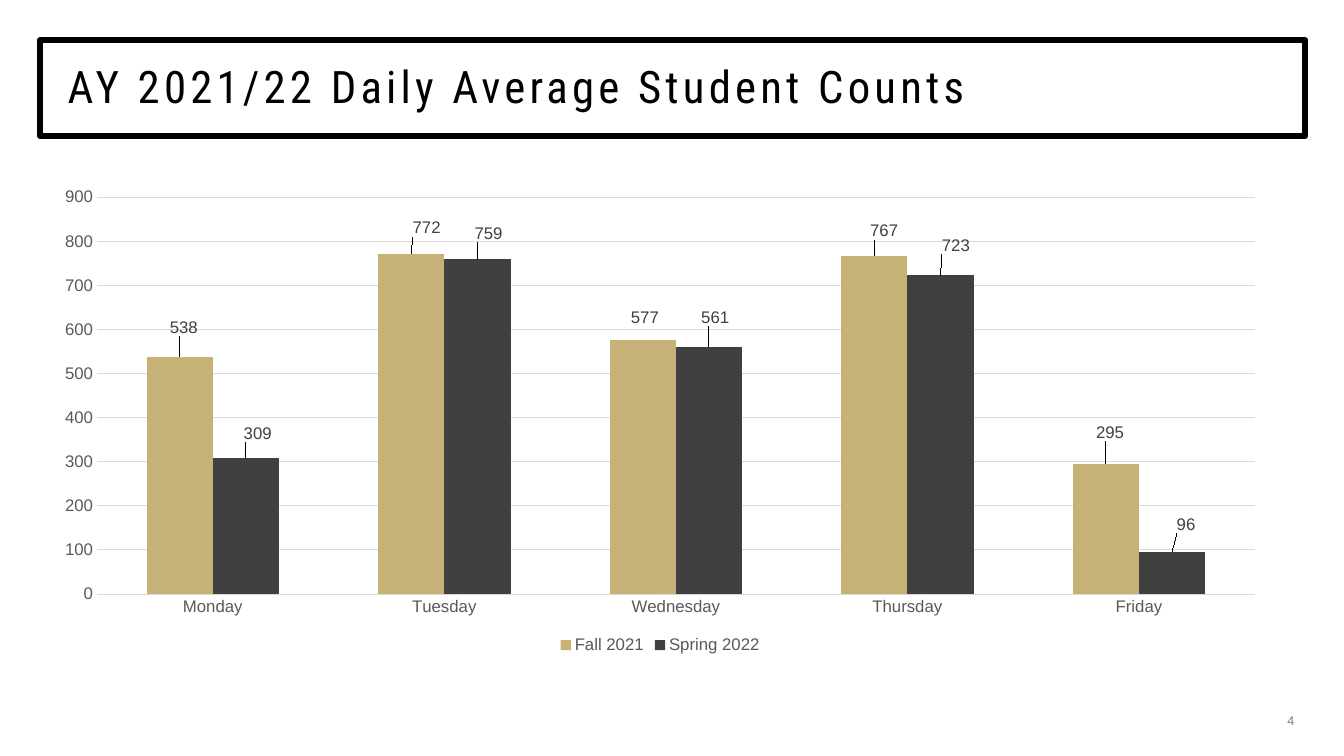
from dataclasses import dataclass

from lxml import etree
from pptx import Presentation
from pptx.chart.data import CategoryChartData
from pptx.dml.color import RGBColor
from pptx.enum.chart import XL_CHART_TYPE, XL_LABEL_POSITION, XL_LEGEND_POSITION, XL_TICK_MARK
from pptx.enum.shapes import MSO_SHAPE
from pptx.enum.text import MSO_ANCHOR, PP_ALIGN
from pptx.oxml.ns import qn
from pptx.util import Pt

COLUMN = XL_CHART_TYPE.COLUMN_CLUSTERED
OUTSIDE = XL_LABEL_POSITION.OUTSIDE_END
BOTTOM = XL_LEGEND_POSITION.BOTTOM
NO_TICK = XL_TICK_MARK.NONE
RECT = MSO_SHAPE.RECTANGLE
MIDDLE = MSO_ANCHOR.MIDDLE
RIGHT = PP_ALIGN.RIGHT


@dataclass(frozen=True)
class Theme:
    head: str = "Roboto Condensed"
    body: str = "Arial"
    ink: str = "000000"
    axis: str = "595959"
    label: str = "404040"
    page: str = "7F7F7F"
    grid: str = "D9D9D9"
    fall: str = "C6B277"
    spring: str = "404040"
    title_size: float = 32
    chart_size: float = 12
    base_size: float = 10
    page_size: float = 9


THEME = Theme()
DAYS = ["Monday", "Tuesday", "Wednesday", "Thursday", "Friday"]
TERMS = [
    ("Fall 2021", THEME.fall, [538, 772, 577, 767, 295],
     [(3, -11.5), (11, -9), (1.5, -6.5), (7, -8.5), (3, -13)]),
    ("Spring 2022", THEME.spring, [309, 759, 561, 723, 96],
     [(8.5, -8), (8, -9), (4.5, -11.5), (11, -12), (10, -10)]),
]


def style(font, name, size, color):
    font.name = name
    font.size = Pt(size)
    font.color.rgb = RGBColor.from_string(color)


def add_layout(parent, index, **values):
    layout = parent.find(qn("c:layout"))
    if layout is None:
        layout = etree.Element(qn("c:layout"))
        parent.insert(index, layout)
    manual = etree.SubElement(layout, qn("c:manualLayout"))
    for key, value in values.items():
        etree.SubElement(manual, qn(f"c:{key}")).set("val", str(value))


def add_title(slide, box, text):
    left, top, width, height = box
    frame = slide.shapes.add_shape(RECT, Pt(left), Pt(top), Pt(width), Pt(height))
    frame.shadow.inherit = False
    frame.fill.background()
    frame.line.color.rgb = RGBColor.from_string(THEME.ink)
    frame.line.width = Pt(4.5)

    title = slide.shapes.add_textbox(
        Pt(left + 19.5), Pt(top + 0.7), Pt(width - 38), Pt(height))
    words = title.text_frame
    words.word_wrap = True
    words.vertical_anchor = MIDDLE
    words.margin_left = words.margin_right = 0
    words.margin_top = words.margin_bottom = 0
    line = words.paragraphs[0]
    run = line.add_run()
    run.text = text
    run.font._element.set("spc", "300")
    line.line_spacing = 0.9
    style(line.font, THEME.head, THEME.title_size, THEME.ink)


def add_labels(series, nudges, width, height):
    for index, (right, down) in enumerate(nudges):
        label = series.points[index].data_label
        style(label.font, THEME.body, THEME.chart_size, THEME.label)
        label.position = OUTSIDE
    for node, (right, down) in zip(series._element.iter(qn("c:dLbl")), nudges):
        add_layout(node, 1, x=right / width, y=down / height)
    labels = series.data_labels
    labels.show_value = True
    labels.position = OUTSIDE
    style(labels.font, THEME.body, THEME.chart_size, THEME.label)


def add_counts(slide, box):
    left, top, width, height = box
    data = CategoryChartData(number_format="General")
    data.categories = DAYS
    for name, color, counts, nudges in TERMS:
        data.add_series(name, counts)
    chart = slide.shapes.add_chart(
        COLUMN, Pt(left), Pt(top), Pt(width), Pt(height), data).chart
    style(chart.font, THEME.body, THEME.base_size, THEME.ink)
    chart.has_title = False
    chart.has_legend = True
    chart.legend.position = BOTTOM
    chart.legend.include_in_layout = False
    style(chart.legend.font, THEME.body, THEME.chart_size, THEME.axis)

    for axis in (chart.category_axis, chart.value_axis):
        axis.major_tick_mark = axis.minor_tick_mark = NO_TICK
        axis.format.line.fill.background()
        style(axis.tick_labels.font, THEME.body, THEME.chart_size, THEME.axis)
    scale = chart.value_axis
    scale.minimum_scale = 0
    scale.maximum_scale = 900
    scale.major_unit = 100
    grid = scale.major_gridlines.format.line
    grid.color.rgb = RGBColor.from_string(THEME.grid)
    grid.width = Pt(0.75)

    plot = chart.plots[0]
    plot.gap_width = 150
    plot.overlap = 0
    plot.vary_by_categories = False
    for series, (name, color, counts, nudges) in zip(plot.series, TERMS):
        series.format.fill.solid()
        series.format.fill.fore_color.rgb = RGBColor.from_string(color)
        add_labels(series, nudges, width, height)
    area = chart._chartSpace.find(".//" + qn("c:plotArea"))
    add_layout(area, 0, layoutTarget="inner", xMode="edge", yMode="edge",
               x=40.5 / width, y=13.5 / height, w=827 / width, h=283.5 / height)


def add_page(slide, box, number):
    words = slide.shapes.add_textbox(*map(Pt, box)).text_frame
    words.word_wrap = True
    words.vertical_anchor = MIDDLE
    line = words.paragraphs[0]
    line.text = number
    line.alignment = RIGHT
    line.space_after = Pt(6)
    style(line.font, THEME.body, THEME.page_size, THEME.page)


def main():
    deck = Presentation()
    deck.slide_width = Pt(960)
    deck.slide_height = Pt(540)
    slide = deck.slides.add_slide(deck.slide_layouts[6])
    add_title(slide, (28.8, 28.8, 903.6, 68.4), "AY 2021/22 Daily Average Student Counts")
    add_counts(slide, (28.8, 127.4, 885.6, 342.7))
    add_page(slide, (877, 504.7, 54.7, 19.4), "4")
    deck.save("out.pptx")


if __name__ == "__main__":
    main()
